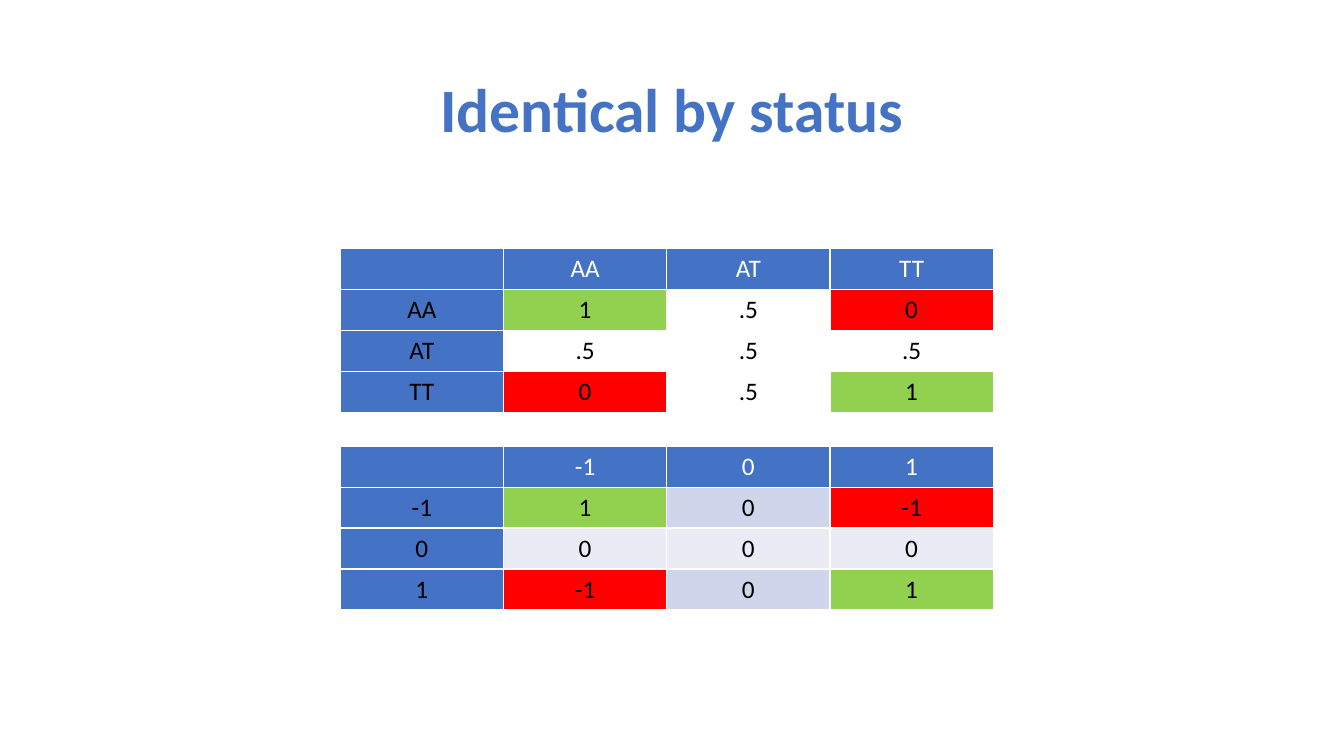
from dataclasses import dataclass

from pptx import Presentation
from pptx.dml.color import RGBColor
from pptx.enum.text import MSO_ANCHOR, PP_ALIGN
from pptx.util import Emu, Pt

CENTER = PP_ALIGN.CENTER
MIDDLE = MSO_ANCHOR.MIDDLE

EMU_PER_PX = 9525
SLIDE_WIDTH, SLIDE_HEIGHT = 1280, 720
MATRIX_LEFT, MATRIX_WIDTH, ROW_HEIGHT = 324, 622, 39
HETEROZYGOTE = 2  # row and column of the mixed genotype

FONT = "Calibri"
BLUE, GREEN, RED = "4472C4", "92D050", "FF0000"
WHITE, BLACK = "FFFFFF", "000000"


@dataclass(frozen=True)
class Matrix:
    top: int
    genotypes: list[str]
    scores: list[list[str]]
    outer_fill: str
    middle_fill: str


MATRICES = [
    Matrix(237, ["AA", "AT", "TT"],
           [["1", ".5", "0"], [".5", ".5", ".5"], ["0", ".5", "1"]],
           WHITE, WHITE),
    Matrix(425, ["-1", "0", "1"],
           [["1", "0", "-1"], ["0", "0", "0"], ["-1", "0", "1"]],
           "CFD5EA", "E9EBF5"),
]


def px(length: int) -> Emu:
    return Emu(length * EMU_PER_PX)


def rgb(color: str) -> RGBColor:
    return RGBColor.from_string(color)


def style_text(paragraph, size: int, color: str, bold: bool) -> None:
    paragraph.alignment = CENTER
    font = paragraph.font
    font.name, font.size, font.bold = FONT, Pt(size), bold
    font.color.rgb = rgb(color)


def cell_fill(matrix: Matrix, row: int, column: int) -> str:
    if row == 0 or column == 0:
        return BLUE
    if row == HETEROZYGOTE:
        return matrix.middle_fill
    if column == HETEROZYGOTE:
        return matrix.outer_fill
    return GREEN if row == column else RED


def add_title(slide, text: str) -> None:
    title = slide.shapes.title
    title.left, title.top = px(88), px(38)
    title.width, title.height = px(1104), px(139)
    frame = title.text_frame
    frame.text = text
    frame.vertical_anchor = MIDDLE
    frame.paragraphs[0].line_spacing = 0.9
    style_text(frame.paragraphs[0], 44, BLUE, True)


def add_matrix(slide, matrix: Matrix) -> None:
    rows = [["", *matrix.genotypes]]
    rows += [[name, *scores]
             for name, scores in zip(matrix.genotypes, matrix.scores)]
    table = slide.shapes.add_table(
        len(rows), len(rows[0]), px(MATRIX_LEFT), px(matrix.top),
        px(MATRIX_WIDTH), px(ROW_HEIGHT * len(rows))).table
    for row, texts in enumerate(rows):
        for column, text in enumerate(texts):
            cell = table.cell(row, column)
            cell.text = text
            cell.fill.solid()
            cell.fill.fore_color.rgb = rgb(cell_fill(matrix, row, column))
            style_text(cell.text_frame.paragraphs[0], 18,
                       WHITE if row == 0 else BLACK, False)


def main() -> None:
    presentation = Presentation()
    presentation.slide_width = px(SLIDE_WIDTH)
    presentation.slide_height = px(SLIDE_HEIGHT)
    title_only = presentation.slide_layouts.get_by_name("Title Only")
    slide = presentation.slides.add_slide(title_only)

    # Heading
    add_title(slide, "Identical by status")

    # Similarity matrices
    for matrix in MATRICES:
        add_matrix(slide, matrix)

    presentation.save("out.pptx")


if __name__ == "__main__":
    main()
